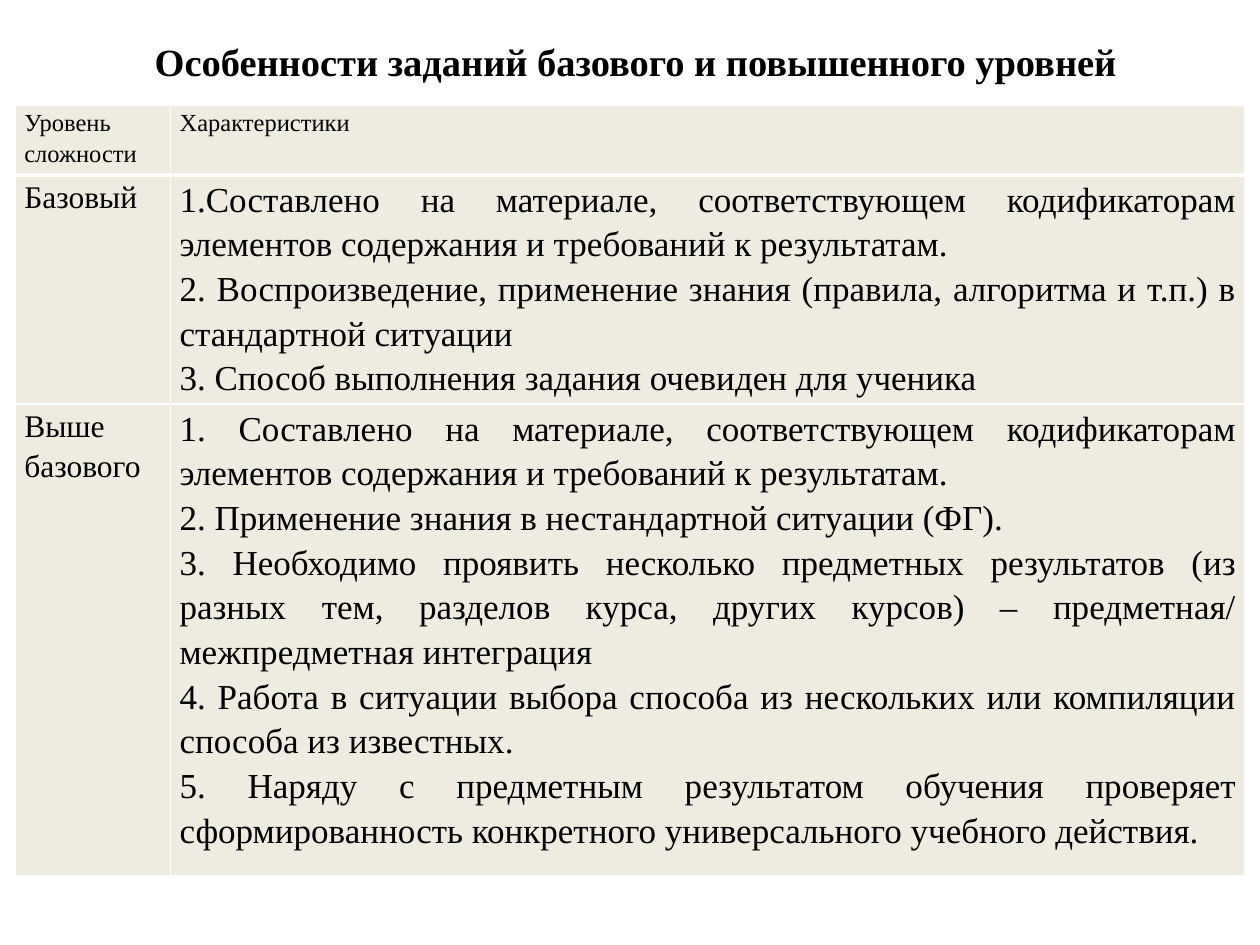
from lxml import etree
from pptx import Presentation
from pptx.dml.color import RGBColor
from pptx.enum.text import MSO_ANCHOR, PP_ALIGN
from pptx.oxml.ns import qn
from pptx.util import Cm, Pt

LEFT, CENTER, JUSTIFY = PP_ALIGN.LEFT, PP_ALIGN.CENTER, PP_ALIGN.JUSTIFY
MIDDLE = MSO_ANCHOR.MIDDLE
TITLE_ONLY = 5

TITLE = "Особенности заданий базового и повышенного уровней"
HEADER = ("Уровень сложности", "Характеристики")
LEVELS = [
    ("Базовый", [
        "1.Составлено на материале, соответствующем кодификаторам элементов содержания и требований к результатам.",
        "2. Воспроизведение, применение знания (правила, алгоритма и т.п.) в стандартной ситуации",
        "3. Способ выполнения задания очевиден для ученика",
    ]),
    ("Выше базового", [
        "1. Составлено на материале, соответствующем кодификаторам элементов содержания и требований к результатам.",
        "2. Применение знания в нестандартной ситуации (ФГ).",
        "3. Необходимо проявить несколько предметных результатов (из разных тем, разделов курса, других курсов)"
        " – предметная/ межпредметная интеграция",
        "4. Работа в ситуации выбора способа из нескольких или компиляции способа из известных.",
        "5. Наряду с предметным результатом обучения проверяет сформированность конкретного"
        " универсального учебного действия.",
    ]),
]


def color(value):
    return RGBColor.from_string(value)


def apply(target, values):
    for name, value in values.items():
        setattr(target, name, value)


class SlideBuilder:
    font = "Times New Roman"
    ink, paper, rule = "000000", "EEECE1", "FFFFFF"
    thin, thick = 1, 3

    def __init__(self, page):
        self.page = page

    def add_lines(self, frame, lines, size, bold=False, **layout):
        """Fill a text frame with one paragraph per line."""
        for index, line in enumerate(lines):
            para = frame.add_paragraph() if index else frame.paragraphs[0]
            apply(para, layout)
            span = para.add_run()
            span.text = line
            apply(span.font, {"name": self.font, "size": Pt(size), "bold": bold})
            span.font.color.rgb = color(self.ink)

    def title(self, text, left, top, width, height):
        box = self.page.shapes.title
        apply(box, {"left": Cm(left), "top": Cm(top), "width": Cm(width), "height": Cm(height)})
        apply(box.text_frame, {"vertical_anchor": MIDDLE, "word_wrap": True})
        self.add_lines(box.text_frame, [text], 22, bold=True, alignment=CENTER)

    def table(self, left, top, widths, heights):
        frame = self.page.shapes.add_table(len(heights), len(widths), Cm(left), Cm(top),
                                           Cm(sum(widths)), Cm(sum(heights)))
        grid = frame.table
        for column, width in zip(grid.columns, widths):
            column.width = Cm(width)
        for row, height in zip(grid.rows, heights):
            row.height = Cm(height)
        return grid

    def cell(self, cell, lines, size, alignment=LEFT, top=thin, bottom=thin):
        apply(cell, {"margin_left": Cm(0.18), "margin_right": Cm(0.18),
                     "margin_top": 0, "margin_bottom": 0})
        cell.fill.solid()
        cell.fill.fore_color.rgb = color(self.paper)
        self.borders(cell, {"lnL": self.thin, "lnR": self.thin, "lnT": top, "lnB": bottom})
        self.add_lines(cell.text_frame, lines, size, alignment=alignment, line_spacing=1.15)

    def borders(self, cell, widths):
        properties = cell._tc.get_or_add_tcPr()
        for index, (side, width) in enumerate(widths.items()):
            line = etree.Element(qn("a:" + side), w=str(Pt(width)))
            fill = etree.SubElement(line, qn("a:solidFill"))
            etree.SubElement(fill, qn("a:srgbClr"), val=self.rule)
            properties.insert(index, line)


def main():
    deck = Presentation()
    apply(deck, {"slide_width": Cm(25.4), "slide_height": Cm(19.05)})
    builder = SlideBuilder(deck.slides.add_slide(deck.slide_layouts[TITLE_ONLY]))

    # Heading
    builder.title(TITLE, 0.71, 0.53, 24.2, 1.4)

    # Table of difficulty levels
    grid = builder.table(0.31, 2.13, widths=(3.13, 21.66), heights=(1.4, 4.62, 9.5))
    for column, text in enumerate(HEADER):
        builder.cell(grid.cell(0, column), [text], 14, bottom=builder.thick)
    for row, (level, features) in enumerate(LEVELS, start=1):
        top = builder.thick if row == 1 else builder.thin
        builder.cell(grid.cell(row, 0), [level], 18, top=top)
        builder.cell(grid.cell(row, 1), features, 20, JUSTIFY, top=top)

    deck.save("out.pptx")


if __name__ == "__main__":
    main()
